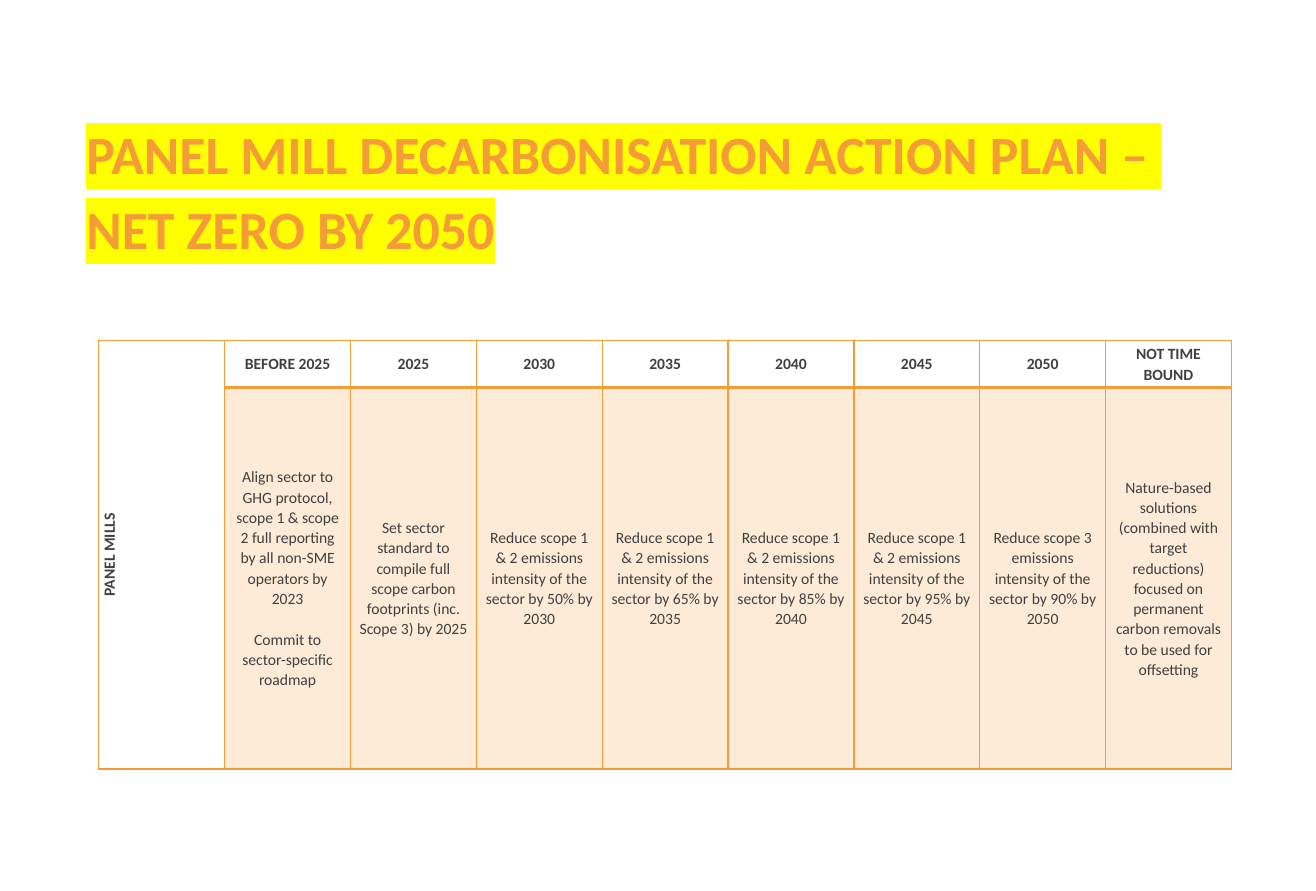
from lxml import etree
from pptx import Presentation
from pptx import util as u
from pptx.dml.color import RGBColor
from pptx.enum import text
from pptx.oxml import ns

ORANGE, YELLOW, GREY = "F59C38", "FFFF00", "404040"
COLUMN_WIDTH = u.Cm(2.84)
ROW_HEIGHTS = [u.Cm(1.06), u.Cm(8.61)]

TITLE_LINES = ["PANEL MILL DECARBONISATION ACTION PLAN – ", "NET ZERO BY 2050"]


def reduction(scopes, percent, year):
    return (f"Reduce scope {scopes} emissions intensity of the sector "
            f"by {percent}% by {year}")


# Each milestone: column heading and the paragraphs of its action
MILESTONES = [
    ("BEFORE 2025", ["Align sector to GHG protocol, scope 1 & scope 2 full "
                     "reporting by all non-SME operators by 2023",
                     "Commit to sector-specific roadmap"]),
    ("2025", ["Set sector standard to compile full scope carbon footprints "
              "(inc. Scope 3) by 2025"]),
    ("2030", [reduction("1 & 2", 50, 2030)]),
    ("2035", [reduction("1 & 2", 65, 2035)]),
    ("2040", [reduction("1 & 2", 85, 2040)]),
    ("2045", [reduction("1 & 2", 95, 2045)]),
    ("2050", [reduction("3", 90, 2050)]),
    ("NOT TIME BOUND", ["Nature-based solutions (combined with target "
                        "reductions) focused on permanent carbon removals "
                        "to be used for offsetting"]),
]


def color(hex_value):
    return RGBColor.from_string(hex_value)


def add_xml(parent, tag, **attributes):
    return etree.SubElement(parent, ns.qn(tag), attributes)


def add_run(paragraph, words, size, hex_value, bold):
    run = paragraph.add_run()
    run.text = words
    run.font.size = u.Pt(size)
    run.font.bold = bold
    run.font.color.rgb = color(hex_value)
    run.font.name = "Calibri"
    return run


def highlight(run, hex_value):
    properties = run._r.get_or_add_rPr()
    mark = etree.Element(ns.qn("a:highlight"))
    add_xml(mark, "a:srgbClr", val=hex_value)
    properties.find(ns.qn("a:solidFill")).addnext(mark)


def paragraphs_for(frame, lines):
    """Yield one paragraph of the frame for each line."""
    for index, line in enumerate(lines):
        paragraph = frame.add_paragraph() if index else frame.paragraphs[0]
        yield index, paragraph, line


def add_title(slide):
    box = slide.shapes.add_textbox(u.Cm(1.7), u.Cm(2.74), u.Cm(27), u.Cm(1.47))
    frame = box.text_frame
    frame.word_wrap = True
    frame.margin_top = u.Cm(0.15)
    for index, paragraph, line in paragraphs_for(frame, TITLE_LINES):
        paragraph.line_spacing = 0.9
        if index:
            paragraph.space_before = u.Pt(10.6)
        highlight(add_run(paragraph, line, 34.4, ORANGE, True), YELLOW)


def set_borders(cell, top=1, bottom=1):
    properties = cell._tc.get_or_add_tcPr()
    for side, points in zip("LRTB", (1, 1, top, bottom)):
        line = add_xml(properties, f"a:ln{side}", w=str(u.Pt(points)))
        add_xml(add_xml(line, "a:solidFill"), "a:srgbClr", val=ORANGE)


def fill_cell(cell, lines, bold):
    cell.vertical_anchor = text.MSO_ANCHOR.MIDDLE
    cell.margin_left = cell.margin_right = u.Cm(0.19)
    cell.margin_top = cell.margin_bottom = 0
    for index, paragraph, line in paragraphs_for(cell.text_frame, lines):
        paragraph.alignment = text.PP_ALIGN.CENTER
        paragraph.line_spacing = 1.07
        paragraph.space_after = u.Pt(8)
        if index:
            paragraph.space_before = u.Pt(5)
        add_run(paragraph, line, 10, GREY, bold)


def tint_cell(cell):
    cell.fill.solid()
    cell.fill.fore_color.rgb = color(ORANGE)
    tint = cell._tc.tcPr.find(ns.qn("a:solidFill"))[0]
    add_xml(tint, "a:alpha", val="20000")


def add_plan_table(slide):
    columns = len(MILESTONES) + 1
    frame = slide.shapes.add_table(2, columns, u.Cm(2.23), u.Cm(7.68),
                                   COLUMN_WIDTH * columns, sum(ROW_HEIGHTS))
    table = frame.table
    table.first_row = table.horz_banding = False
    for column in table.columns:
        column.width = COLUMN_WIDTH
    for row, height in zip(table.rows, ROW_HEIGHTS):
        row.height = height

    # Sector name, turned and spanning both rows
    sector = table.cell(0, 0)
    sector.merge(table.cell(1, 0))
    for row in range(2):
        set_borders(table.cell(row, 0))
        table.cell(row, 0).fill.background()
    fill_cell(sector, ["PANEL MILLS"], True)
    sector._tc.tcPr.set("vert", "vert270")

    # Headings and actions
    for index, (heading, actions) in enumerate(MILESTONES, start=1):
        header, body = table.cell(0, index), table.cell(1, index)
        set_borders(header, bottom=2)
        header.fill.background()
        fill_cell(header, [heading], True)
        set_borders(body, top=2)
        tint_cell(body)
        fill_cell(body, actions, False)


def main():
    presentation = Presentation()
    presentation.slide_width = u.Cm(29.7)
    presentation.slide_height = u.Cm(20.1)
    slide = presentation.slides.add_slide(presentation.slide_layouts[6])
    add_title(slide)
    add_plan_table(slide)
    presentation.save("out.pptx")


if __name__ == "__main__":
    main()
